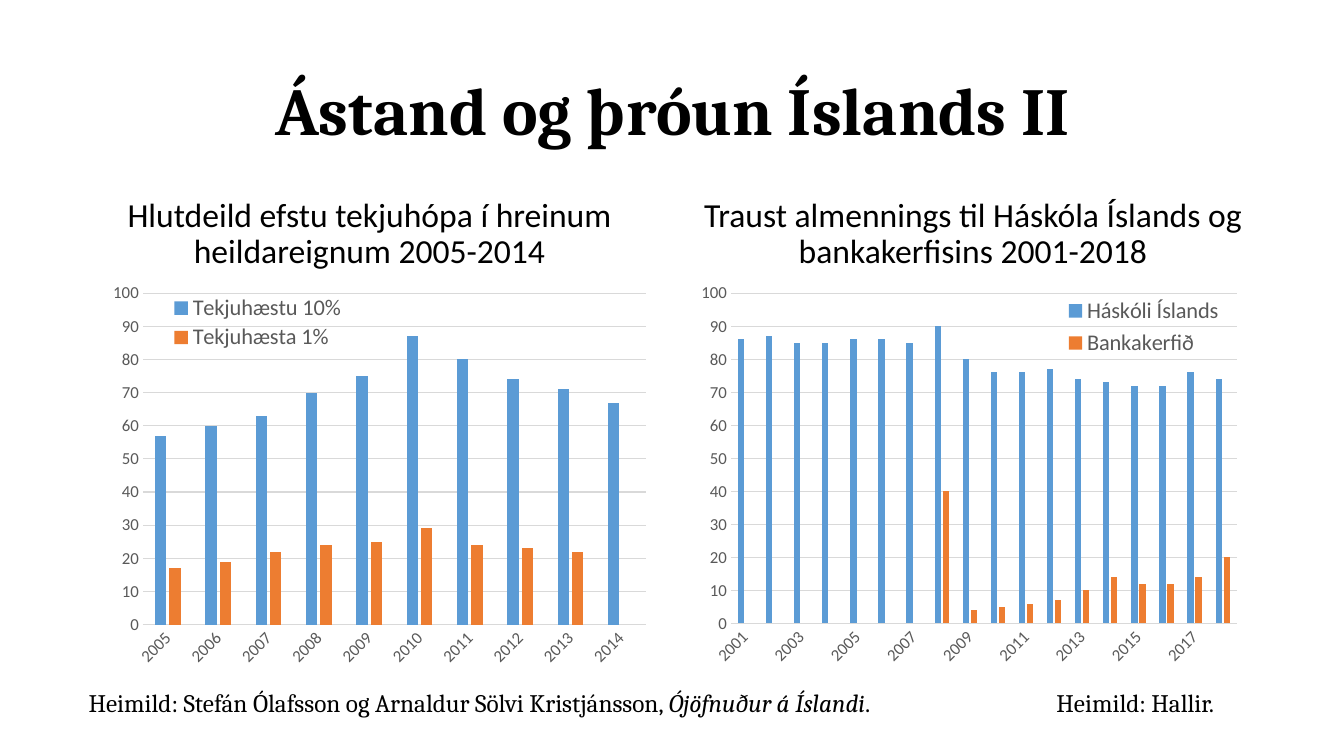
from pptx import Presentation
from pptx.chart.data import CategoryChartData
from pptx.dml.color import RGBColor
from pptx.enum.chart import XL_CHART_TYPE, XL_LEGEND_POSITION, XL_TICK_MARK
from pptx.enum.text import MSO_ANCHOR, MSO_AUTO_SIZE, PP_ALIGN
from pptx.oxml import parse_xml
from pptx.oxml.ns import nsdecls, qn
from pptx.util import Inches, Pt

BLACK = RGBColor(0x00, 0x00, 0x00)
GRAY = RGBColor(0x59, 0x59, 0x59)
RULE = RGBColor(0xD9, 0xD9, 0xD9)
BLUE = RGBColor(0x5B, 0x9B, 0xD5)
ORANGE = RGBColor(0xED, 0x7D, 0x31)

SERIF, SANS = "Cambria", "Calibri"


class Deck:
    def __init__(self):
        self.prs = Presentation()
        self.prs.slide_width, self.prs.slide_height = Inches(13.33), Inches(7.5)
        self.s = self.prs.slides.add_slide(self.prs.slide_layouts[6])

    def box(self, x, y, w, h):
        col, row = self.prs.slide_width / 100, self.prs.slide_height / 100
        return int(x * col), int(y * row), int(w * col), int(h * row)

    def text(self, at, runs, size, font, bold=False, align=PP_ALIGN.LEFT,
             anchor=MSO_ANCHOR.TOP, wrap=True, spacing=None):
        tf = self.s.shapes.add_textbox(*self.box(*at)).text_frame
        tf.word_wrap = wrap
        tf.auto_size = MSO_AUTO_SIZE.NONE if wrap else MSO_AUTO_SIZE.SHAPE_TO_FIT_TEXT
        tf.vertical_anchor = anchor
        p = tf.paragraphs[0]
        p.alignment = align
        p.line_spacing = spacing
        self.font(p.font, size, BLACK, font)
        p.font.bold = bold
        for words, italic in runs:
            r = p.add_run()
            r.text = words
            if italic:
                r.font.italic = True

    def heading(self, at, words, size, font, **style):
        self.text(at, [(words, False)], size, font, align=PP_ALIGN.CENTER,
                  spacing=0.9, **style)

    def source(self, at, *runs):
        self.text(at, runs, 18, SERIF, wrap=False)

    def chart(self, at, years, series, plot, legend):
        data = CategoryChartData()
        data.categories = [str(year) for year in years]
        for name, values in series:
            data.add_series(name, values)
        chart = self.s.shapes.add_chart(
            XL_CHART_TYPE.COLUMN_CLUSTERED, *self.box(*at), data).chart
        self.font(chart.font, 10, BLACK)
        chart.has_title = False

        bars = chart.plots[0]
        bars.gap_width, bars.overlap = 219, -27
        bars.vary_by_categories = False
        for ser, color in zip(bars.series, (BLUE, ORANGE)):
            ser.format.fill.solid()
            ser.format.fill.fore_color.rgb = color
            ser.invert_if_negative = False

        for axis in (chart.category_axis, chart.value_axis):
            axis.major_tick_mark = axis.minor_tick_mark = XL_TICK_MARK.NONE
            self.font(axis.tick_labels.font, 12, GRAY)
        self.line(chart.category_axis.format.line)
        values = chart.value_axis
        values.minimum_scale, values.maximum_scale, values.major_unit = 0, 100, 10
        values.format.line.fill.background()
        values.has_major_gridlines = True
        self.line(values.major_gridlines.format.line)

        chart.has_legend = True
        chart.legend.position = XL_LEGEND_POSITION.BOTTOM
        chart.legend.include_in_layout = True
        self.font(chart.legend.font, 16, GRAY)

        root = chart.element
        body = root.find(".//" + qn("c:catAx")).find(".//" + qn("a:bodyPr"))
        body.set("rot", "-2700000")
        self.layout(root.find(".//" + qn("c:plotArea")), 0, plot,
                    '<c:layoutTarget val="inner"/>')
        self.layout(root.find(".//" + qn("c:legend")), 1, legend)

    def font(self, font, size, color, name=SANS):
        font.size, font.name = Pt(size), name
        font.color.rgb = color

    def line(self, line):
        line.width = Pt(0.75)
        line.color.rgb = RULE

    def layout(self, parent, index, shares, target=""):
        for old in parent.findall(qn("c:layout")):
            parent.remove(old)
        modes = "".join(f'<c:{k}Mode val="edge"/>' for k in "xy")
        sizes = "".join(f'<c:{k} val="{v}"/>' for k, v in zip("xywh", shares))
        parent.insert(index, parse_xml(
            f'<c:layout {nsdecls("c")}><c:manualLayout>{target}{modes}{sizes}'
            '</c:manualLayout></c:layout>'))


def main():
    deck = Deck()
    deck.heading((6.9, 5.33, 86.27, 19.33), "Ástand og þróun Íslands II", 48, SERIF,
                 bold=True, anchor=MSO_ANCHOR.MIDDLE)
    deck.heading((5.85, 24.53, 43.29, 12),
                 "Hlutdeild efstu tekjuhópa í hreinum heildareignum 2005-2014",
                 24, SANS, anchor=MSO_ANCHOR.BOTTOM)
    deck.heading((49.21, 24.53, 46.36, 12),
                 "Traust almennings til Háskóla Íslands og bankakerfisins 2001-2018",
                 24, SANS, anchor=MSO_ANCHOR.BOTTOM)
    deck.source((77.87, 90.27, 14.48, 5.33), ("Heimild: Hallir.", False))
    deck.source((5.85, 90.27, 62.34, 5.33),
                ("Heimild: Stefán Ólafsson og Arnaldur Sölvi Kristjánsson, ", False),
                ("Ójöfnuður á Íslandi", True), (".", False))
    deck.chart((6.9, 36.53, 42.31, 53.73), range(2005, 2015), [
        ("Tekjuhæstu 10%", [57, 60, 63, 70, 75, 87, 80, 74, 71, 67]),
        ("Tekjuhæsta 1%", [17, 19, 22, 24, 25, 29, 24, 23, 22, None]),
    ], plot=(0.088, 0.042, 0.885, 0.816), legend=(0.13, 0.04, 0.32, 0.15))
    deck.chart((50.64, 36.53, 42.54, 53.73), range(2001, 2019), [
        ("Háskóli Íslands", [86, 87, 85, 85, 86, 86, 85, 90, 80,
                             76, 76, 77, 74, 73, 72, 72, 76, 74]),
        ("Bankakerfið", [None] * 7 + [40, 4, 5, 6, 7, 10, 14, 12, 12, 14, 20]),
    ], plot=(0.088, 0.042, 0.885, 0.813), legend=(0.67, 0.04, 0.28, 0.17))
    deck.prs.save("out.pptx")


if __name__ == "__main__":
    main()
